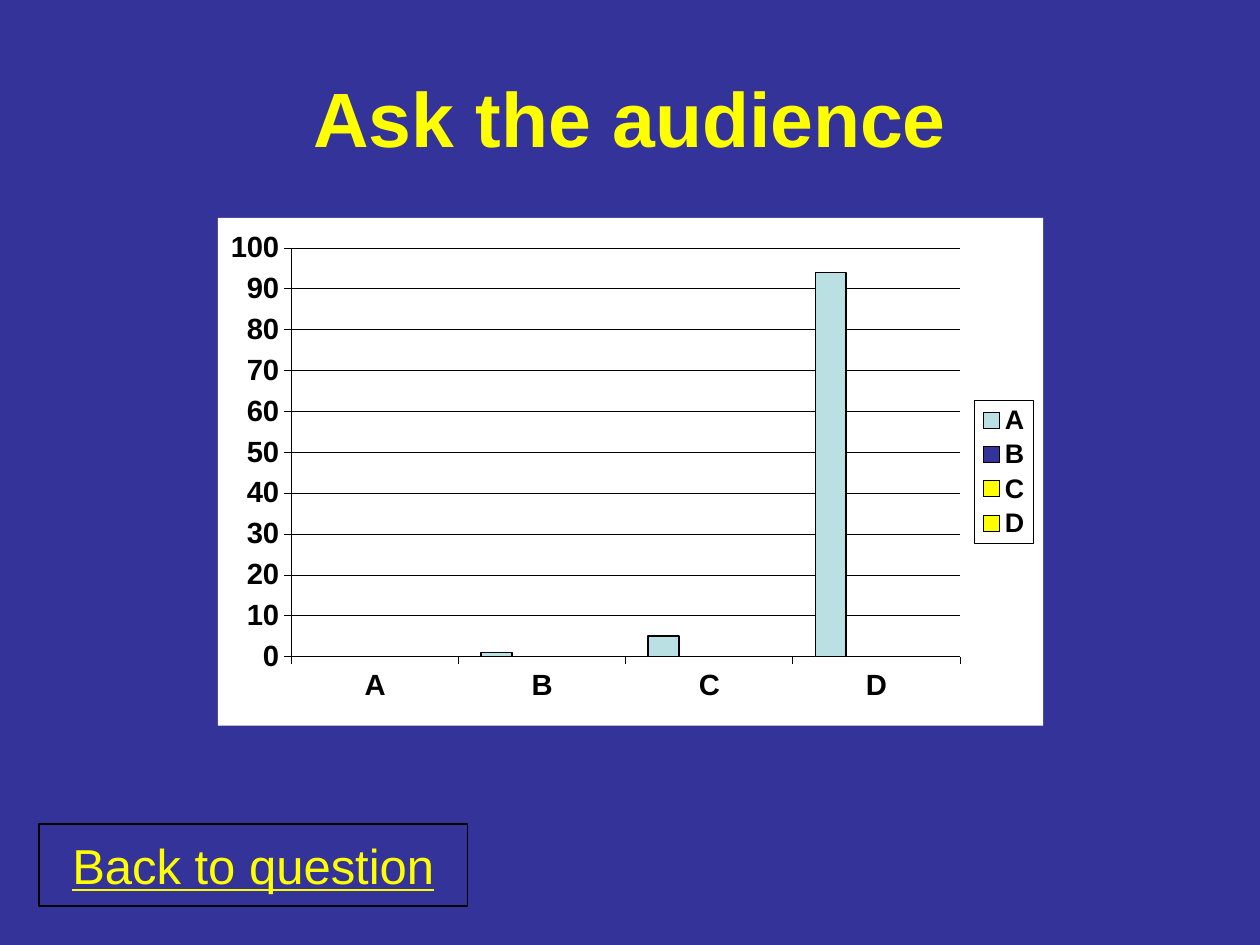
from lxml import etree
from pptx import Presentation
from pptx.chart.data import CategoryChartData
from pptx.dml.color import RGBColor
from pptx.enum.chart import XL_CHART_TYPE, XL_LEGEND_POSITION, XL_TICK_LABEL_POSITION, XL_TICK_MARK
from pptx.enum.shapes import MSO_SHAPE
from pptx.enum.text import MSO_ANCHOR, PP_ALIGN
from pptx.oxml.ns import qn
from pptx.util import Inches, Pt

BLUE = RGBColor(0x33, 0x33, 0x99)
YELLOW = RGBColor(0xFF, 0xFF, 0x00)
PALE_TEAL = RGBColor(0xBB, 0xE0, 0xE3)
BLACK = RGBColor(0, 0, 0)
WHITE = RGBColor(0xFF, 0xFF, 0xFF)
FONT = "Arial"

# Content
TITLE = "Ask the audience"
BUTTON = "Back to question"
ANSWERS = ["A", "B", "C", "D"]
VOTES = [  # series name, values, fill
    ("A", (0, 1, 5, 94), PALE_TEAL),
    ("B", (0, 0, 0, 0), BLUE),
    ("C", (0, 0, 0, 0), YELLOW),
    ("D", (None,) * 4, YELLOW),
]
PLOT_LAYOUT = {"x": 0.089, "y": 0.059, "w": 0.81, "h": 0.805}


def set_font(font, size, color, bold=False, underline=False):
    font.name = FONT
    font.size = Pt(size)
    font.bold = bold
    font.underline = underline
    font.color.rgb = color


def write_text(shape, text, wrap=True, **font_format):
    frame = shape.text_frame
    frame.word_wrap = wrap
    frame.vertical_anchor = MSO_ANCHOR.MIDDLE
    paragraph = frame.paragraphs[0]
    paragraph.alignment = PP_ALIGN.CENTER
    run = paragraph.add_run()
    run.text = text
    set_font(run.font, **font_format)


def set_line(line, width):
    line.color.rgb = BLACK
    line.width = Pt(width)


def paint_background(parent, color, outlined=False):
    """Add a solid c:spPr, with or without a thin black outline."""
    properties = etree.Element(qn("c:spPr"))
    fill = etree.SubElement(properties, qn("a:solidFill"))
    etree.SubElement(fill, qn("a:srgbClr"), val=str(color))
    line = etree.SubElement(properties, qn("a:ln"), w=str(Pt(0.25)))
    if outlined:
        line_fill = etree.SubElement(line, qn("a:solidFill"))
        etree.SubElement(line_fill, qn("a:srgbClr"), val=str(BLACK))
    else:
        etree.SubElement(line, qn("a:noFill"))
    parent.find(qn("c:txPr")).addprevious(properties)


def place_plot(plot_area):
    """Fix the inner plot area as fractions of the chart."""
    for old_layout in plot_area.findall(qn("c:layout")):
        plot_area.remove(old_layout)
    layout = etree.Element(qn("c:layout"))
    plot_area.insert(0, layout)
    manual = etree.SubElement(layout, qn("c:manualLayout"))
    settings = {"layoutTarget": "inner", "xMode": "edge", "yMode": "edge", **PLOT_LAYOUT}
    for name, value in settings.items():
        etree.SubElement(manual, qn(f"c:{name}"), val=str(value))


def add_vote_chart(slide):
    data = CategoryChartData()
    data.categories = ANSWERS
    for name, values, _ in VOTES:
        data.add_series(name, values)
    chart = slide.shapes.add_chart(
        XL_CHART_TYPE.COLUMN_CLUSTERED,
        Inches(1.73), Inches(1.73), Inches(6.55), Inches(4.03), data).chart
    chart.has_title = False
    set_font(chart.font, 16.7, BLACK, bold=True)
    paint_background(chart.element, WHITE)

    # Columns
    plot = chart.plots[0]
    plot.gap_width = 150
    plot.overlap = 0
    plot.vary_by_categories = False
    for series, (_, _, color) in zip(plot.series, VOTES):
        series.format.fill.solid()
        series.format.fill.fore_color.rgb = color
        set_line(series.format.line, 1)

    # Axes and gridlines
    for axis in (chart.category_axis, chart.value_axis):
        axis.major_tick_mark = XL_TICK_MARK.OUTSIDE
        axis.minor_tick_mark = XL_TICK_MARK.NONE
        set_font(axis.tick_labels.font, 16.7, BLACK, bold=True)
        set_line(axis.format.line, 0.25)
    chart.category_axis.tick_label_position = XL_TICK_LABEL_POSITION.LOW
    value_axis = chart.value_axis
    value_axis.minimum_scale = 0
    value_axis.maximum_scale = 100
    value_axis.major_unit = 10
    value_axis.has_major_gridlines = True
    set_line(value_axis.major_gridlines.format.line, 0.25)

    # Legend
    chart.has_legend = True
    legend = chart.legend
    legend.position = XL_LEGEND_POSITION.RIGHT
    legend.include_in_layout = False
    set_font(legend.font, 15.3, BLACK, bold=True)
    legend_element = chart.element.find(".//" + qn("c:legend"))
    paint_background(legend_element, WHITE, outlined=True)
    place_plot(chart.element.find(".//" + qn("c:plotArea")))


def main():
    presentation = Presentation()
    presentation.slide_width = Inches(10)
    presentation.slide_height = Inches(7.5)
    slide = presentation.slides.add_slide(presentation.slide_layouts[6])
    slide.background.fill.solid()
    slide.background.fill.fore_color.rgb = BLUE

    title = slide.shapes.add_textbox(Inches(0.5), Inches(0.3), Inches(9), Inches(1.25))
    write_text(title, TITLE, size=44, color=YELLOW, bold=True)

    add_vote_chart(slide)

    # Button
    button = slide.shapes.add_shape(
        MSO_SHAPE.RECTANGLE, Inches(0.31), Inches(6.54), Inches(3.4), Inches(0.65))
    button.shadow.inherit = False
    button.fill.background()
    set_line(button.line, 0.75)
    write_text(button, BUTTON, wrap=False, size=28, color=YELLOW, underline=True)

    presentation.save("out.pptx")


if __name__ == "__main__":
    main()
